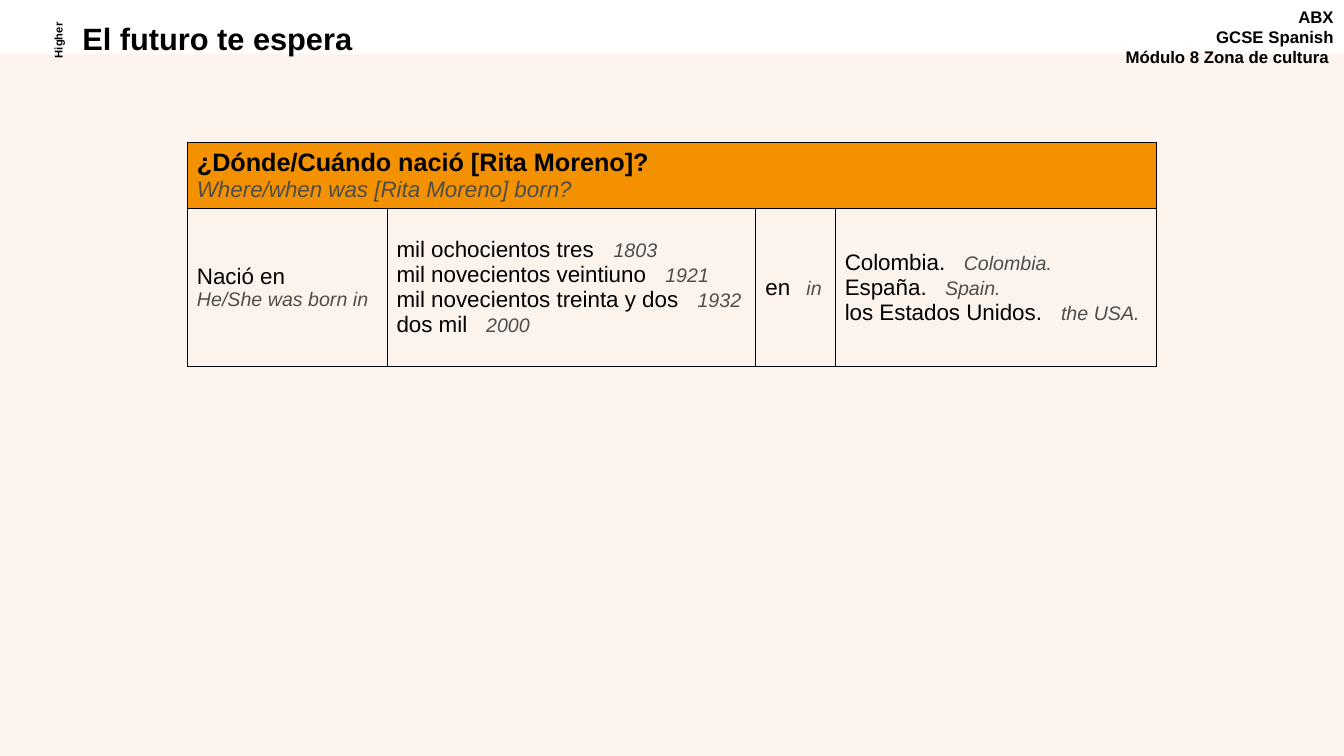
import pptx
import pptx.util
import pptx.dml.color
import pptx.enum.shapes
import pptx.enum.text
import pptx.oxml
import pptx.oxml.ns
from lxml import etree

Pt = pptx.util.Pt
ALIGN = pptx.enum.text.PP_ALIGN
ANCHOR = pptx.enum.text.MSO_ANCHOR

# Content
COLORS = {"black": "000000", "grey": "4D4D4C", "orange": "F39100", "cream": "FDF3ED"}
STYLES = {
    "course": {"size": Pt(12), "bold": True},
    "title": {"size": Pt(22), "bold": True},
    "tier": {"size": Pt(8), "bold": True},
    "question": {"size": Pt(18), "bold": True},
    "question_en": {"size": Pt(16), "italic": True, "color": "grey"},
    "es": {"size": Pt(16)},
    "en": {"size": Pt(14), "italic": True, "color": "grey"},
}
# Text boxes: lines, style, (left, top, width, height), alignment, rotation, line spacing
LABELS = [
    (["ABX", "GCSE Spanish", "Módulo 8 Zona de cultura "], "course",
     (791.3, 1.4, 168.5, 55.4), ALIGN.RIGHT, 0, 1),
    (["El futuro te espera"], "title", (51.8, 13.7, 614, 31), ALIGN.LEFT, 0, 0.9),
    (["Higher"], "tier", (13, 20.9, 56, 15.8), ALIGN.CENTER, 270, 1),
]
QUESTION = [("¿Dónde/Cuándo nació [Rita Moreno]?", "question"),
            ("Where/when was [Rita Moreno] born?", "question_en")]
BORN = [("Nació en", "es"), ("He/She was born in", "en")]
# Spanish, English, tab position of the English
PHRASES = [
    [("mil ochocientos tres", "1803", 155), ("mil novecientos veintiuno", "1921", 192),
     ("mil novecientos treinta y dos", "1932", 215), ("dos mil", "2000", 64)],
    [("en", "in", 29.3)],
    [("Colombia.", "Colombia.", 85), ("España.", "Spain.", 71.6),
     ("los Estados Unidos.", "the USA.", 154.5)],
]
SLIDE_W, SLIDE_H, BAND_TOP = 960, 540, 38.9
TABLE_LEFT, TABLE_TOP = 133.9, 102
COL_WIDTHS = [142.6, 263.5, 56.7, 229.2]
ROW_HEIGHTS = [44.6, 113.2]


def rgb(name):
    return pptx.dml.color.RGBColor.from_string(COLORS[name])


def add_run(p, text, style):
    r = p.add_run()
    r.text = text
    fmt = {"name": "Arial", "bold": False, "italic": False, **STYLES[style]}
    r.font.color.rgb = rgb(fmt.pop("color", "black"))
    for key, value in fmt.items():
        setattr(r.font, key, value)


def fill_lines(tf, lines):
    """Each line is a list of (text, style) runs and a tab position or None."""
    for i, (runs, tab) in enumerate(lines):
        p = tf.paragraphs[0] if i == 0 else tf.add_paragraph()
        if tab:
            tabs = etree.SubElement(p._p.get_or_add_pPr(), pptx.oxml.ns.qn("a:tabLst"))
            etree.SubElement(tabs, pptx.oxml.ns.qn("a:tab"), pos=str(Pt(tab)), algn="l")
        for text, style in runs:
            add_run(p, text, style)


def add_borders(cell):
    for side in "LRTB":
        cell._tc.get_or_add_tcPr().append(pptx.oxml.parse_xml(
            f'<a:ln{side} {pptx.oxml.ns.nsdecls("a")} w="{Pt(0.75)}"><a:solidFill>'
            f'<a:srgbClr val="{COLORS["black"]}"/></a:solidFill></a:ln{side}>'))


prs = pptx.Presentation()
prs.slide_width, prs.slide_height = Pt(SLIDE_W), Pt(SLIDE_H)
s = prs.slides.add_slide(prs.slide_layouts[6])

# Cream page area
sp = s.shapes.add_shape(pptx.enum.shapes.MSO_SHAPE.RECTANGLE, 0, Pt(BAND_TOP),
                        Pt(SLIDE_W), Pt(SLIDE_H - BAND_TOP))
sp.shadow.inherit = False
sp.fill.solid()
sp.fill.fore_color.rgb = rgb("cream")
sp.line.fill.background()

# Heading, course and tier labels
for lines, style, box, align, rotation, spacing in LABELS:
    sp = s.shapes.add_textbox(*map(Pt, box))
    sp.rotation = rotation
    tf = sp.text_frame
    tf.word_wrap = True
    fill_lines(tf, [([(line, style)], None) for line in lines])
    for p in tf.paragraphs:
        p.alignment, p.line_spacing = align, spacing

# Phrase table
table = s.shapes.add_table(len(ROW_HEIGHTS), len(COL_WIDTHS), Pt(TABLE_LEFT), Pt(TABLE_TOP),
                           Pt(sum(COL_WIDTHS)), Pt(sum(ROW_HEIGHTS))).table
table.first_row = table.horz_banding = False
for col, width in zip(table.columns, COL_WIDTHS):
    col.width = Pt(width)
for row, height in zip(table.rows, ROW_HEIGHTS):
    row.height = Pt(height)
for cell in table.iter_cells():
    add_borders(cell)
    cell.fill.background()
    cell.vertical_anchor = ANCHOR.MIDDLE
    cell.margin_left = cell.margin_right = Pt(6.75)
    cell.margin_top = cell.margin_bottom = Pt(3)

# Question row
head = table.cell(0, 0)
head.merge(table.cell(0, len(COL_WIDTHS) - 1))
head.fill.solid()
head.fill.fore_color.rgb = rgb("orange")

# Words with their translations
fill_lines(head.text_frame, [([run], None) for run in QUESTION])
fill_lines(table.cell(1, 0).text_frame, [([run], None) for run in BORN])
for c, phrases in enumerate(PHRASES, start=1):
    fill_lines(table.cell(1, c).text_frame,
               [([(es + "\t", "es"), (en, "en")], tab) for es, en, tab in phrases])

prs.save("out.pptx")
